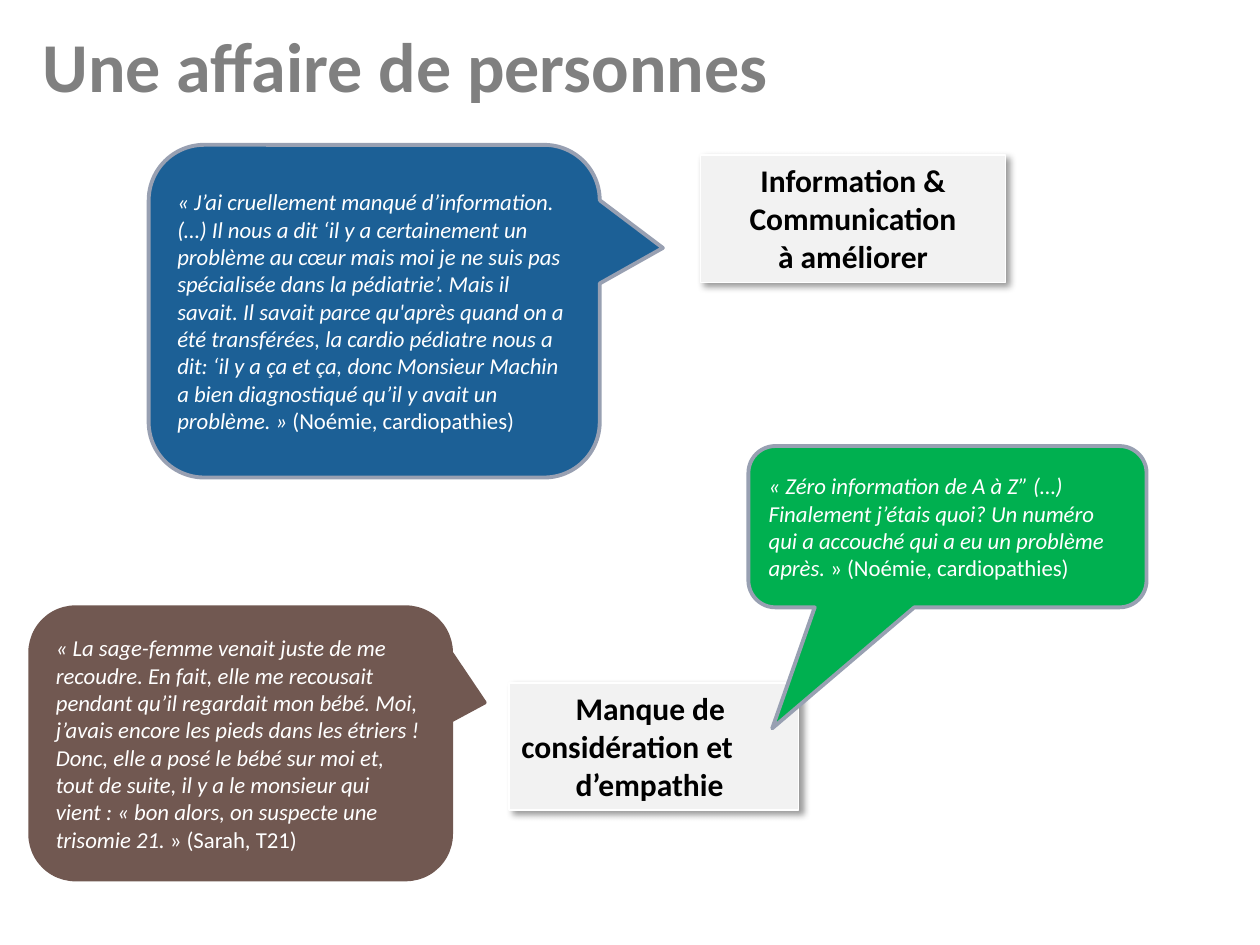
from lxml import etree
from pptx import Presentation
from pptx.dml.color import RGBColor
from pptx.enum.shapes import MSO_SHAPE as Shape
from pptx.enum.text import MSO_ANCHOR as Anchor, PP_ALIGN as Align
from pptx.oxml import parse_xml
from pptx.oxml.ns import nsdecls
from pptx.util import Inches, Pt

COLS, ROWS = 100, 75
prs = Presentation()
prs.slide_width, prs.slide_height = Inches(10), Inches(7.5)
COL, ROW = prs.slide_width / COLS, prs.slide_height / ROWS


def rgb(value):
    return RGBColor.from_string(value)


def place(box):
    """Turn a box in grid columns and rows into slide lengths."""
    x, y, w, h = box
    return int(x * COL), int(y * ROW), int(w * COL), int(h * ROW)


def add_run(p, text, size=13, color="FFFFFF", bold=False, italic=False):
    r = p.add_run()
    r.text = text
    font = r.font
    font.name, font.size = "Calibri", Pt(size)
    font.bold, font.italic = bold, italic
    font.color.rgb = rgb(color)


def add_box(slide, kind, box, fill, line, width):
    sp = slide.shapes.add_shape(kind, *place(box))
    sp.shadow.inherit = False
    sp.fill.solid()
    sp.fill.fore_color.rgb = rgb(fill)
    sp.line.color.rgb = rgb(line)
    sp.line.width = Pt(width)
    sp.text_frame.word_wrap = True
    return sp


def add_shadow(sp, blur=4, dist=3, angle=45, alpha=40):
    effects = sp._element.spPr.find("{*}effectLst")
    effects.append(parse_xml(
        f'<a:outerShdw {nsdecls("a")} blurRad="{Pt(blur)}" dist="{Pt(dist)}" '
        f'dir="{angle * 60000}" algn="tl" rotWithShape="0"><a:srgbClr val="000000">'
        f'<a:alpha val="{alpha * 1000}"/></a:srgbClr></a:outerShdw>'))


def add_title(slide, box, text):
    tf = slide.shapes.add_textbox(*place(box)).text_frame
    tf.word_wrap = True
    add_run(tf.paragraphs[0], text, size=40, color="808080", bold=True)


def add_label(slide, box, lines, align, indents):
    """Add a shadowed theme label; indents are in grid columns, one per line."""
    sp = add_box(slide, Shape.RECTANGLE, box, "F2F2F2", "FFFFFF", 0.75)
    add_shadow(sp)
    tf = sp.text_frame
    tf.vertical_anchor = Anchor.TOP
    for i, (text, indent) in enumerate(zip(lines, indents)):
        p = tf.add_paragraph() if i else tf.paragraphs[0]
        p.alignment = align
        if indent:
            p._p.get_or_add_pPr().set("marL", str(int(indent * COL)))
        add_run(p, text, size=18, color="000000", bold=True)


def add_quote(slide, box, tip, fill, line, quote, source):
    """Add a speech bubble; tip is its point, as shares of the box from its centre."""
    sp = add_box(slide, Shape.ROUNDED_RECTANGULAR_CALLOUT, box, fill, line, 2.22)
    for i, value in enumerate(tip):
        sp.adjustments[i] = value
    tf = sp.text_frame
    tf.vertical_anchor = Anchor.MIDDLE
    p = tf.paragraphs[0]
    p.alignment = Align.LEFT
    add_run(p, quote, italic=True)
    add_run(p, source)


def main():
    slide = prs.slides.add_slide(prs.slide_layouts[6])
    add_label(slide, (55.6, 12.3, 24.2, 10.1),
              ["Information & Communication", "à améliorer"], Align.CENTER, (0, 0))
    add_label(slide, (40.4, 54.2, 23, 10.1),
              ["Manque de", "considération et", "d’empathie"], Align.LEFT, (4.3, 0, 4.3))
    add_quote(slide, (59.4, 35.4, 31.6, 12.8), (-0.44, 1.25), "00B050", "98A0B2",
              "« Zéro information de A à Z” (…) Finalement j’étais quoi? Un numéro "
              "qui a accouché qui a eu un problème après.",
              " » (Noémie, cardiopathies)")
    add_quote(slide, (11.8, 11.5, 35.8, 26.4), (0.64, -0.19), "1C6096", "98A0B2",
              "« J’ai cruellement manqué d’information. (…) Il nous a dit ‘il y a "
              "certainement un problème au cœur mais moi je ne suis pas spécialisée "
              "dans la pédiatrie’. Mais il savait. Il savait parce qu'après quand on a "
              "été transférées, la cardio pédiatre nous a dit: ‘il y a ça et ça, donc "
              "Monsieur Machin a bien diagnostiqué qu’il y avait un problème. »",
              " (Noémie, cardiopathies)")
    add_title(slide, (2.4, 1.3, 97.2, 12.5), "Une affaire de personnes")
    add_quote(slide, (2.4, 48.2, 33.4, 21.6), (0.58, -0.15), "715851", "715851",
              "« La sage-femme venait juste de me recoudre. En fait, elle me recousait "
              "pendant qu’il regardait mon bébé. Moi, j’avais encore les pieds dans les "
              "étriers ! Donc, elle a posé le bébé sur moi et, tout de suite, il y a le "
              "monsieur qui vient : « bon alors, on suspecte une trisomie 21.",
              " » (Sarah, T21)")
    prs.save("out.pptx")


if __name__ == "__main__":
    main()
